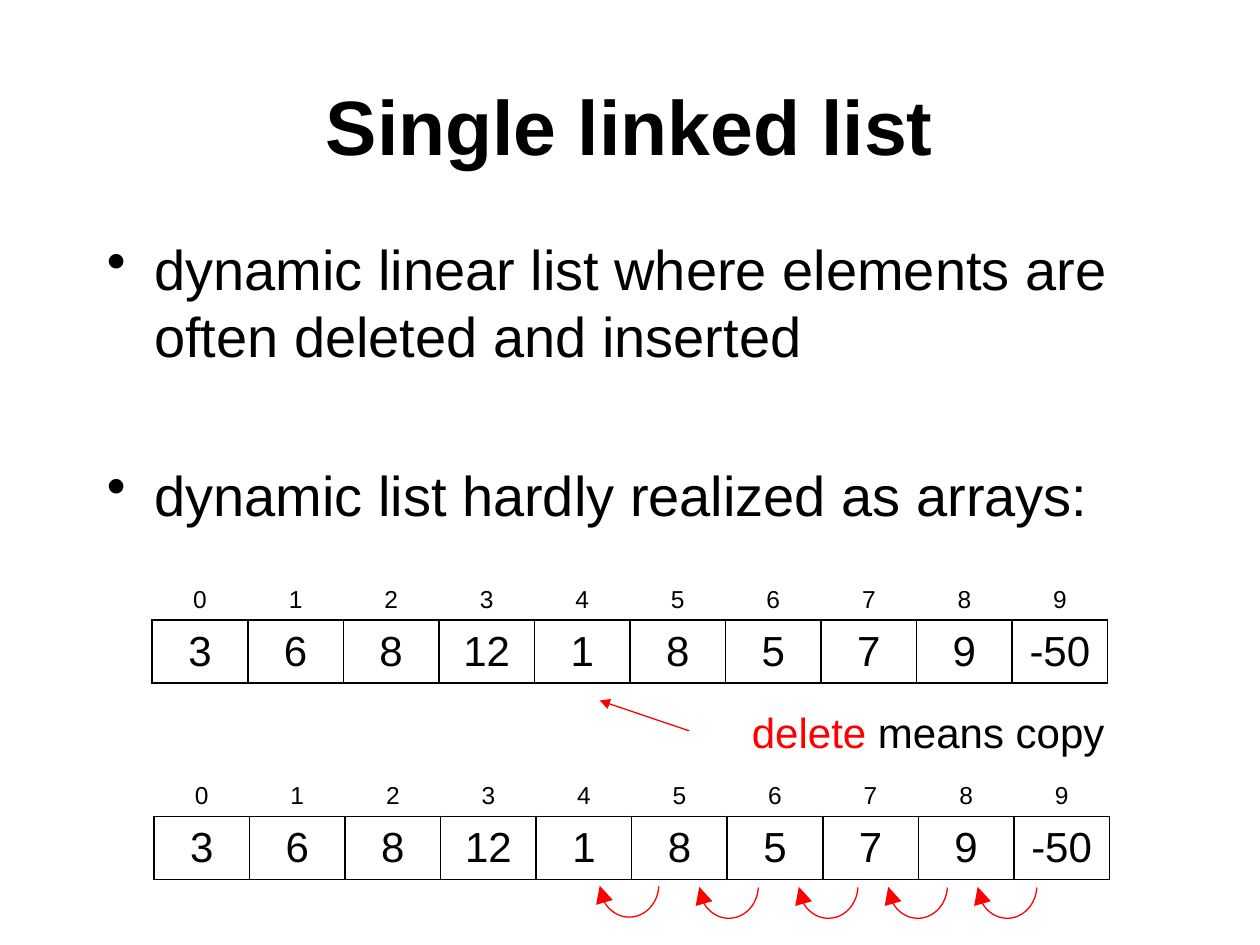
from dataclasses import dataclass

from lxml import etree
from pptx import Presentation
from pptx.dml.color import RGBColor
from pptx.enum.shapes import MSO_CONNECTOR, MSO_SHAPE
from pptx.enum.text import MSO_ANCHOR, PP_ALIGN
from pptx.oxml.ns import qn
from pptx.util import Pt

ARC = MSO_SHAPE.ARC
STRAIGHT = MSO_CONNECTOR.STRAIGHT
TOP, MIDDLE, BOTTOM = MSO_ANCHOR.TOP, MSO_ANCHOR.MIDDLE, MSO_ANCHOR.BOTTOM
LEFT, CENTER = PP_ALIGN.LEFT, PP_ALIGN.CENTER


@dataclass(frozen=True)
class Theme:
    font: str = "Arial"
    ink: RGBColor = RGBColor(0, 0, 0)
    accent: RGBColor = RGBColor(255, 0, 0)
    title: int = 44
    body: int = 32
    value: int = 24
    index: int = 14
    rule: float = 1
    arrow: float = 0.75


THEME = Theme()
BULLETS = [
    "dynamic linear list where elements are often deleted and inserted",
    "dynamic list hardly realized as arrays:",
]
BULLET_GAP = 52
BULLET_INDENT = 27
VALUES = [3, 6, 8, 12, 1, 8, 5, 7, 9, -50]
INDEX_ROW, VALUE_ROW = 27.36, 36


def add_run(p, text, size, color=THEME.ink, bold=False):
    r = p.add_run()
    r.text = text
    r.font.name = THEME.font
    r.font.size = Pt(size)
    r.font.bold = bold
    r.font.color.rgb = color


def add_text_frame(slide, box, anchor=TOP, wrap=True):
    tf = slide.shapes.add_textbox(*map(Pt, box)).text_frame
    tf.word_wrap = wrap
    tf.vertical_anchor = anchor
    return tf


def add_title(slide, box):
    p = add_text_frame(slide, box, MIDDLE).paragraphs[0]
    p.alignment = CENTER
    add_run(p, "Single linked list", THEME.title, bold=True)


def add_bullets(slide, box):
    tf = add_text_frame(slide, box)
    for i, text in enumerate(BULLETS):
        p = tf.add_paragraph() if i else tf.paragraphs[0]
        p.alignment = LEFT
        p.space_before = Pt(BULLET_GAP if i else 0)
        pPr = p._p.get_or_add_pPr()
        pPr.set("marL", str(Pt(BULLET_INDENT)))
        pPr.set("indent", str(-Pt(BULLET_INDENT)))
        etree.SubElement(pPr, qn("a:buChar"), char="•")
        add_run(p, text, THEME.body)


def set_borders(cell, ruled):
    """Rule the sides named in ruled (L, R, T, B) and clear the others."""
    tcPr = cell._tc.get_or_add_tcPr()
    for side in "LRTB":
        ln = etree.SubElement(tcPr, qn(f"a:ln{side}"), w=str(Pt(THEME.rule)))
        if side in ruled:
            fill = etree.SubElement(ln, qn("a:solidFill"))
            etree.SubElement(fill, qn("a:srgbClr"), val=str(THEME.ink))
        else:
            etree.SubElement(ln, qn("a:noFill"))


def add_array(slide, box):
    """Table with a row of indexes over a row of boxed values."""
    frame = slide.shapes.add_table(2, len(VALUES), *map(Pt, box))
    table = frame.table
    table.first_row = table.horz_banding = False
    for column in table.columns:
        column.width = Pt(box[2] / len(VALUES))
    rows = [
        (INDEX_ROW, range(len(VALUES)), THEME.index, BOTTOM, "B"),
        (VALUE_ROW, VALUES, THEME.value, MIDDLE, "LRTB"),
    ]
    for row, (height, items, size, anchor, ruled) in enumerate(rows):
        table.rows[row].height = Pt(height)
        for col, item in enumerate(items):
            cell = table.cell(row, col)
            cell.vertical_anchor = anchor
            set_borders(cell, ruled)
            cell.fill.background()
            p = cell.text_frame.paragraphs[0]
            p.alignment = CENTER
            add_run(p, str(item), size)


def style_arrow(sp, head_size):
    sp.line.color.rgb = THEME.accent
    sp.line.width = Pt(THEME.arrow)
    etree.SubElement(sp.line._get_or_add_ln(), qn("a:tailEnd"),
                     type="triangle", w=head_size, len=head_size)


def add_delete_note(slide, box):
    """Caption with an arrow up and left to the deleted element."""
    x, y = box[:2]
    p = add_text_frame(slide, box, wrap=False).paragraphs[0]
    add_run(p, "delete ", THEME.value, THEME.accent)
    add_run(p, "means copy", THEME.value)
    ends = x - 28.8, y + 17.3, x - 80, y
    arrow = slide.shapes.add_connector(STRAIGHT, *map(Pt, ends))
    style_arrow(arrow, "med")
    etree.SubElement(arrow._element.spPr, qn("a:effectLst"))


def add_copy_arc(slide, box):
    arc = slide.shapes.add_shape(ARC, *map(Pt, box))
    arc.adjustments[0] = 2.2
    arc.adjustments[1] = 106.54
    arc.shadow.inherit = False
    arc.fill.background()
    style_arrow(arc, "lg")


def main():
    prs = Presentation()
    prs.slide_width, prs.slide_height = Pt(720), Pt(540)
    slide = prs.slides.add_slide(prs.slide_layouts[6])
    add_title(slide, (54, 26, 612, 90))
    add_bullets(slide, (54, 130.5, 612, 173.5))
    array_size = 546, INDEX_ROW + VALUE_ROW
    add_array(slide, (87, 327, *array_size))
    add_delete_note(slide, (422.6, 400.3, 218.2, 36.7))
    add_array(slide, (88, 439.2, *array_size))
    for x, y in [(342.7, 486.7), (399.6, 487.4), (456.5, 487.4),
                 (507.6, 487.4), (558.7, 487.4)]:
        add_copy_arc(slide, (x, y, 33.8, 37.4))
    prs.save("out.pptx")


if __name__ == "__main__":
    main()
